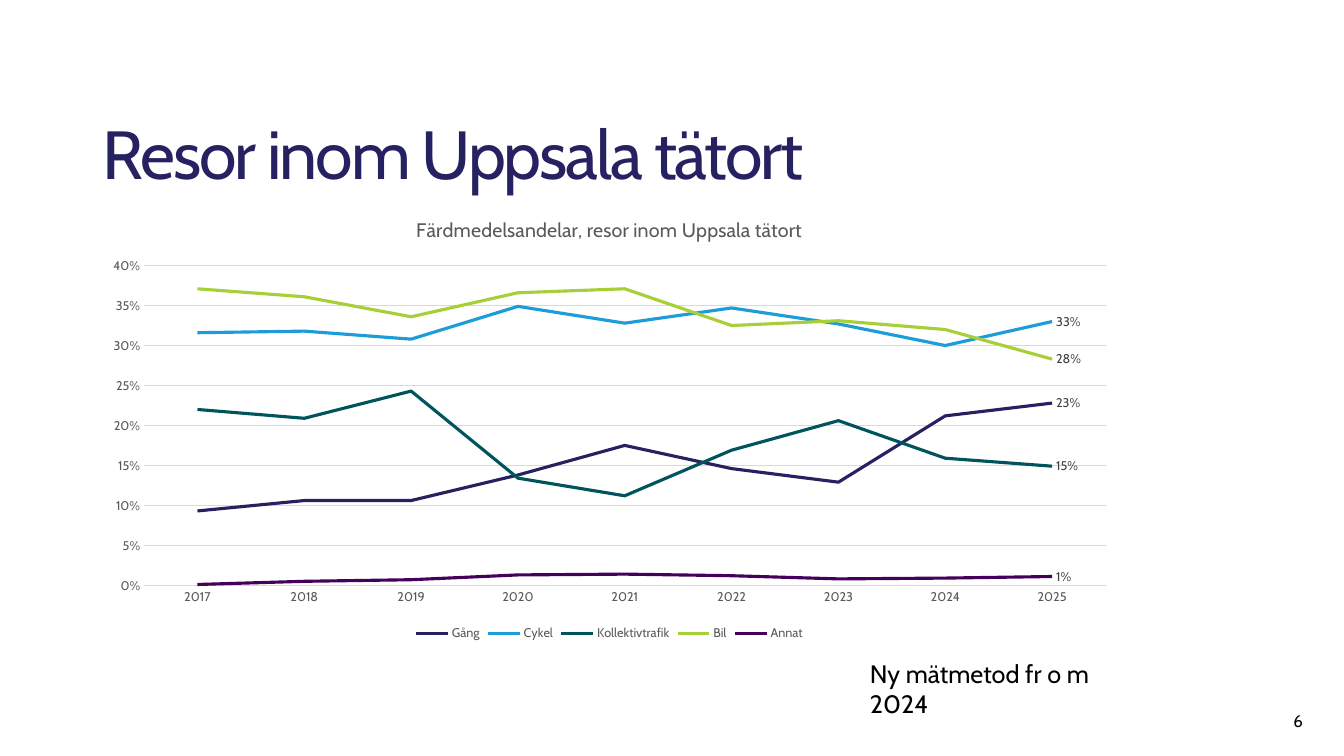
"""Build a slide with a line chart of travel mode shares in Uppsala."""
import pptx
import pptx.chart.data
import pptx.dml.color
import pptx.enum.chart
import pptx.enum.text
import pptx.util

FONT = "Cabin"
NAVY = "262261"
GREY = "595959"
PALE = "D9D9D9"
LEFT, WIDTH = 0.92, 10.25


def color(value):
    return pptx.dml.color.RGBColor.from_string(value)


def write(frame, text, size=18, fill="000000", align="LEFT", anchor="TOP",
          line_spacing=None, tracking=None):
    frame.word_wrap = True
    frame.vertical_anchor = pptx.enum.text.MSO_ANCHOR[anchor]
    paragraph = frame.paragraphs[0]
    paragraph.alignment = pptx.enum.text.PP_ALIGN[align]
    paragraph.line_spacing = line_spacing
    run = paragraph.add_run()
    run.text = text
    run.font.name = FONT
    run.font.size = pptx.util.Pt(size)
    run.font.bold = False
    run.font.color.rgb = color(fill)
    if tracking is not None:
        run.font._element.set("spc", str(round(tracking * 100)))


presentation = pptx.Presentation()
presentation.slide_width = pptx.util.Inches(13.33)
presentation.slide_height = pptx.util.Inches(7.5)
slide = presentation.slides.add_slide(presentation.slide_layouts.get_by_name("Title Only"))

title = slide.shapes.title
title.left, title.top, title.width, title.height = map(pptx.util.Inches, (LEFT, 1.09, WIDTH, 0.89))
title.text_frame.auto_size = pptx.enum.text.MSO_AUTO_SIZE.NONE
write(title.text_frame, "Resor inom Uppsala tätort", size=48.6, fill=NAVY,
      anchor="BOTTOM", line_spacing=0.9, tracking=-1.5)

mode_shares = [
    ("Gång", NAVY, (0.093, 0.106, 0.106, 0.138, 0.175, 0.146, 0.129, 0.212, 0.228)),
    ("Cykel", "1C9CD9", (0.316, 0.318, 0.308, 0.349, 0.328, 0.347, 0.327, 0.3, 0.33)),
    ("Kollektivtrafik", "00555C", (0.22, 0.209, 0.243, 0.134, 0.112, 0.169, 0.206, 0.159, 0.149)),
    ("Bil", "A6CF38", (0.371, 0.361, 0.336, 0.366, 0.371, 0.325, 0.331, 0.32, 0.283)),
    ("Annat", "45005C", (0.001, 0.005, 0.007, 0.013, 0.014, 0.012, 0.008, 0.009, 0.011)),
]
chart_data = pptx.chart.data.CategoryChartData(number_format="0%")
chart_data.categories = [str(year) for year in range(2017, 2026)]
for mode, line_color, shares in mode_shares:
    chart_data.add_series(mode, shares)

chart = slide.shapes.add_chart(
    pptx.enum.chart.XL_CHART_TYPE.LINE,
    *map(pptx.util.Inches, (LEFT, 1.97, WIDTH, 4.43)), chart_data).chart
chart.font.name = FONT
chart.font.size = pptx.util.Pt(10)
chart.font.color.rgb = color("000000")
chart.has_title = True
write(chart.chart_title.text_frame, "Färdmedelsandelar, resor inom Uppsala tätort",
      size=14, fill=GREY, align="CENTER")
chart.chart_title.include_in_layout = False
chart.has_legend = True
chart.legend.position = pptx.enum.chart.XL_LEGEND_POSITION.BOTTOM
chart.legend.include_in_layout = False

category_axis, value_axis = chart.category_axis, chart.value_axis
for axis in (category_axis, value_axis):
    axis.major_tick_mark = pptx.enum.chart.XL_TICK_MARK.NONE
    axis.minor_tick_mark = pptx.enum.chart.XL_TICK_MARK.NONE
for part in (category_axis.tick_labels, value_axis.tick_labels, chart.legend):
    part.font.name = FONT
    part.font.size = pptx.util.Pt(9)
    part.font.color.rgb = color(GREY)
value_axis.minimum_scale = 0
value_axis.maximum_scale = 0.4
value_axis.major_unit = 0.05
value_axis.has_major_gridlines = True
value_axis.tick_labels.number_format = "0%"
value_axis.tick_labels.number_format_is_linked = False
value_axis.format.line.fill.background()
for line in (category_axis.format.line, value_axis.major_gridlines.format.line):
    line.color.rgb = color(PALE)
    line.width = pptx.util.Pt(0.75)

chart.plots[0].vary_by_categories = False
for series, (mode, line_color, shares) in zip(chart.plots[0].series, mode_shares):
    series.smooth = False
    series.format.line.color.rgb = color(line_color)
    series.format.line.width = pptx.util.Pt(2.25)
    label = series.points[len(shares) - 1].data_label
    label.position = pptx.enum.chart.XL_LABEL_POSITION.RIGHT
    label.font.name = FONT
    label.font.size = pptx.util.Pt(9)
    label.font.color.rgb = color("404040")

note = slide.shapes.add_textbox(*map(pptx.util.Inches, (8.53, 6.48, 2.46, 0.71)))
write(note.text_frame, "Ny mätmetod fr o m 2024")
note.text_frame.auto_size = pptx.enum.text.MSO_AUTO_SIZE.SHAPE_TO_FIT_TEXT

page_number = slide.shapes.add_textbox(*map(pptx.util.Inches, (12.42, 6.95, 0.6, 0.4)))
write(page_number.text_frame, "6", size=12, align="RIGHT", anchor="MIDDLE")

presentation.save("out.pptx")
